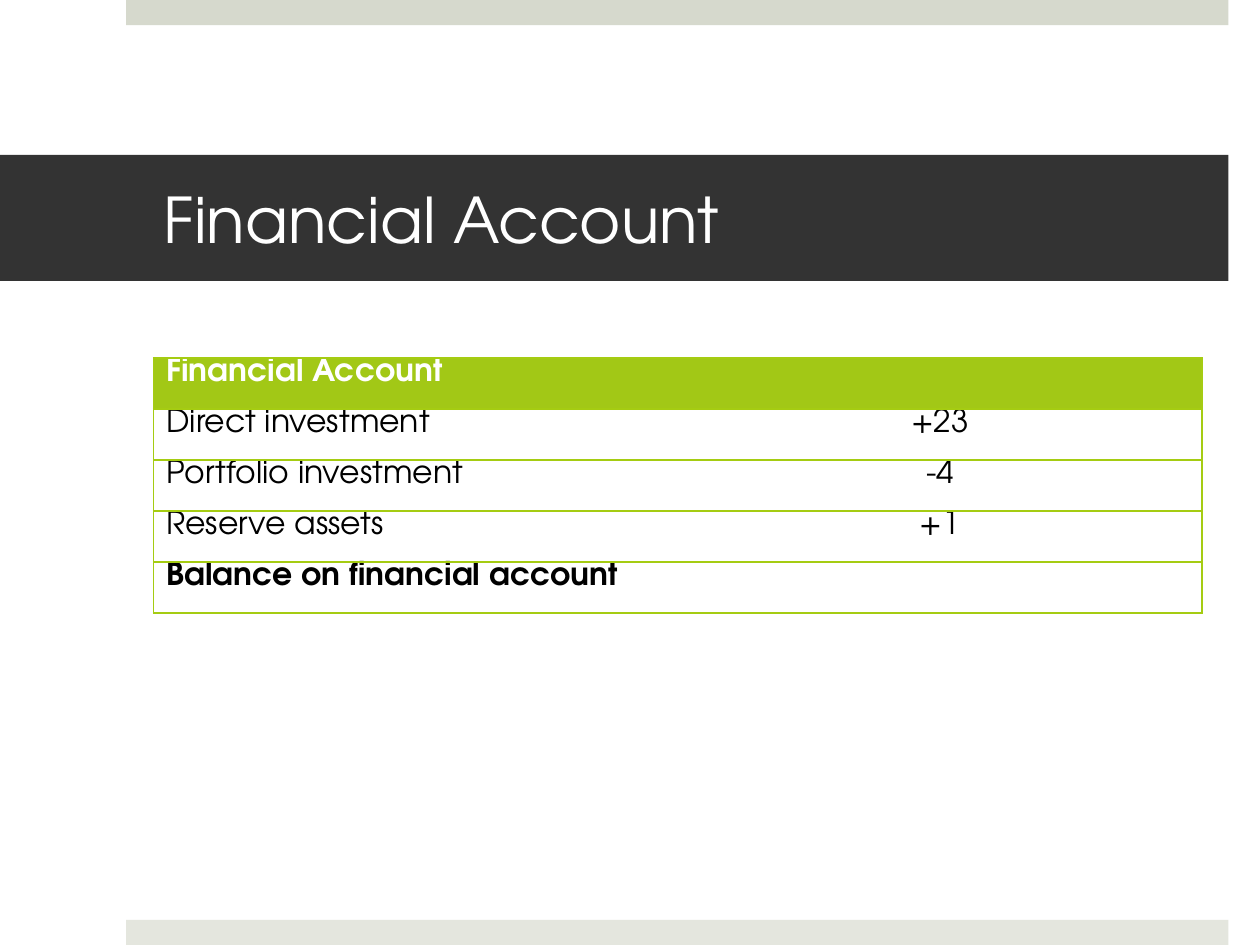
from typing import NamedTuple

from lxml.etree import SubElement
from pptx import Presentation
from pptx.dml.color import RGBColor
from pptx.enum.shapes import MSO_SHAPE
from pptx.enum.text import MSO_ANCHOR, PP_ALIGN
from pptx.oxml.ns import qn
from pptx.util import Inches, Pt

FONT = "TeX Gyre Adventor"
WHITE = RGBColor(0xFF, 0xFF, 0xFF)
BLACK = RGBColor(0x00, 0x00, 0x00)
CHARCOAL = RGBColor(0x33, 0x33, 0x33)
HEADER_GREEN = RGBColor(0xA2, 0xC8, 0x16)
BORDER_GREEN = RGBColor(0xA5, 0xCC, 0x12)


class Bar(NamedTuple):
    top: float
    color: RGBColor


class AccountRow(NamedTuple):
    label: str
    amount: str = ""
    bold: bool = False
    header: bool = False


BARS = [
    Bar(0, RGBColor(0xD6, 0xD9, 0xCD)),
    Bar(7.3, RGBColor(0xE4, 0xE6, 0xDE)),
]
ROWS = [
    AccountRow("Financial Account", bold=True, header=True),
    AccountRow("Direct investment", "+23"),
    AccountRow("Portfolio investment", "-4"),
    AccountRow("Reserve assets", "+1"),
    AccountRow("Balance on financial account", bold=True),
]
ROW_HEIGHT = 0.405
COLUMN_WIDTH = 4.16


def write_text(text_frame, text: str, *, size: float = 18, color: RGBColor = BLACK,
               bold: bool = False, align: PP_ALIGN = PP_ALIGN.LEFT) -> None:
    paragraph = text_frame.paragraphs[0]
    paragraph.alignment = align
    paragraph.font.size = Pt(size)
    if text:
        run = paragraph.add_run()
        run.text = text
        run.font.name = FONT
        run.font.size = Pt(size)
        run.font.bold = bold
        run.font.color.rgb = color


def add_bar(slide, bar: Bar) -> None:
    shape = slide.shapes.add_shape(
        MSO_SHAPE.RECTANGLE, Inches(1), Inches(bar.top), Inches(8.75), Inches(0.2))
    shape.shadow.inherit = False
    shape.fill.solid()
    shape.fill.fore_color.rgb = bar.color
    shape.line.fill.background()


def format_title(title) -> None:
    title.left, title.top = Inches(0), Inches(1.23)
    title.width, title.height = Inches(9.75), Inches(1)
    title.fill.solid()
    title.fill.fore_color.rgb = CHARCOAL
    text_frame = title.text_frame
    text_frame.word_wrap = True
    text_frame.vertical_anchor = MSO_ANCHOR.MIDDLE
    text_frame.margin_left, text_frame.margin_right = Inches(1.3), Inches(0.3)
    text_frame.margin_top = text_frame.margin_bottom = Inches(0.05)
    write_text(text_frame, "Financial Account", size=36, color=WHITE)


def set_borders(cell, hidden_side: str) -> None:
    """Draw a green line on every side of the cell but the hidden one."""
    properties = cell._tc.get_or_add_tcPr()
    for side in "LRTB":
        line = SubElement(properties, qn(f"a:ln{side}"), w=str(Pt(1)))
        if side == hidden_side:
            SubElement(line, qn("a:noFill"))
        else:
            fill = SubElement(line, qn("a:solidFill"))
            SubElement(fill, qn("a:srgbClr"), val=str(BORDER_GREEN))


def format_cell(cell, text: str, row: AccountRow, align: PP_ALIGN, hidden_side: str) -> None:
    cell.margin_left = cell.margin_right = Inches(0.1)
    cell.margin_top = cell.margin_bottom = 0
    set_borders(cell, hidden_side)
    if row.header:
        cell.fill.solid()
        cell.fill.fore_color.rgb = HEADER_GREEN
    else:
        cell.fill.background()
    write_text(cell.text_frame, text, color=WHITE if row.header else BLACK,
               bold=row.bold, align=align)


def add_account_table(slide) -> None:
    table = slide.shapes.add_table(
        len(ROWS), 2, Inches(1.22), Inches(2.84),
        Inches(2 * COLUMN_WIDTH), Inches(ROW_HEIGHT * len(ROWS))).table
    table.first_row = False
    table.horz_banding = False
    for index, row in enumerate(ROWS):
        table.rows[index].height = Inches(ROW_HEIGHT)
        format_cell(table.cell(index, 0), row.label, row, PP_ALIGN.LEFT, "R")
        format_cell(table.cell(index, 1), row.amount, row, PP_ALIGN.CENTER, "L")


def main() -> None:
    presentation = Presentation()
    presentation.slide_width, presentation.slide_height = Inches(10), Inches(7.5)
    slide = presentation.slides.add_slide(presentation.slide_layouts.get_by_name("Title Only"))
    for bar in BARS:
        add_bar(slide, bar)
    format_title(slide.shapes.title)
    add_account_table(slide)
    presentation.save("out.pptx")


if __name__ == "__main__":
    main()
